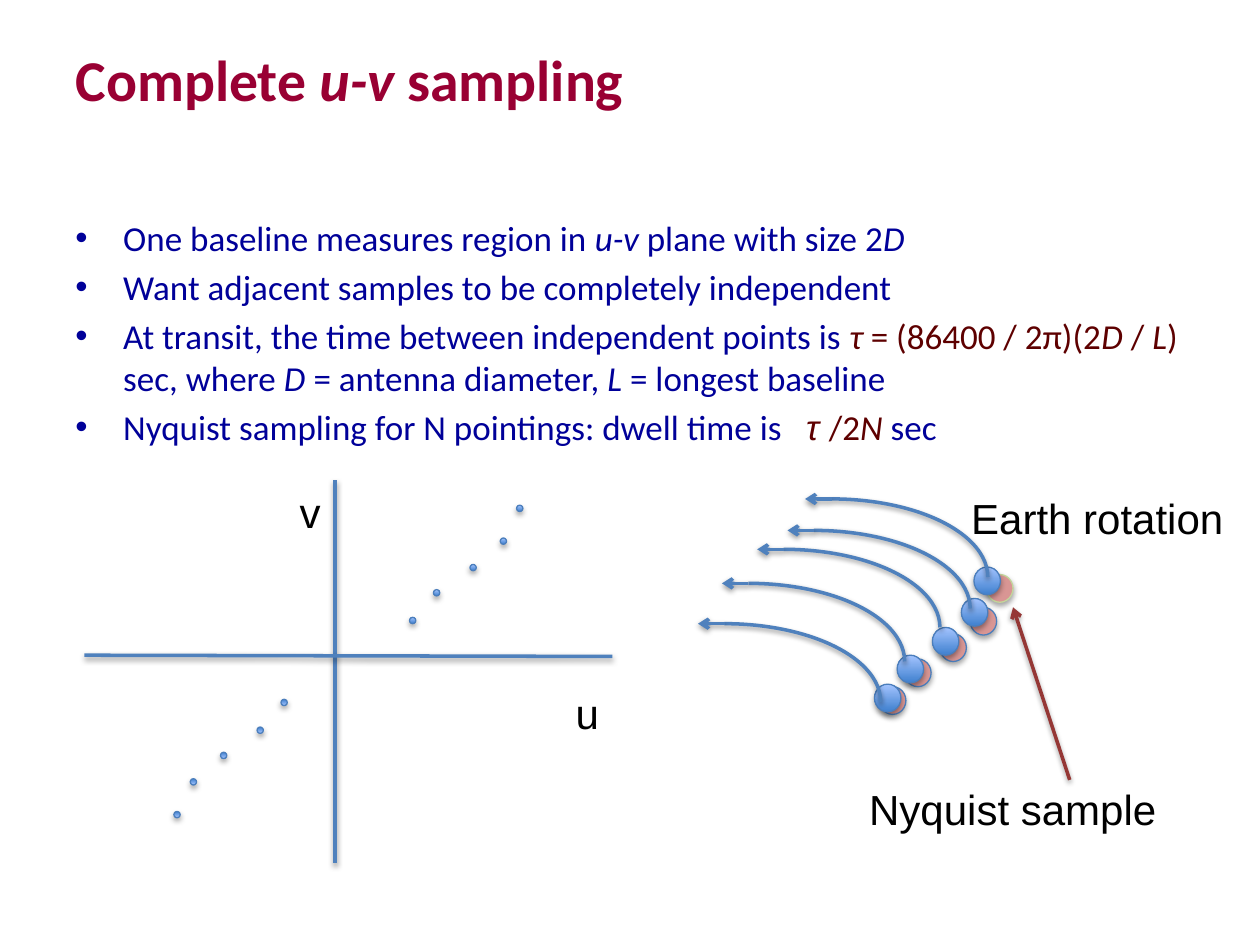
from dataclasses import dataclass

from lxml.etree import SubElement
from pptx import Presentation
from pptx.dml.color import RGBColor
from pptx.enum.shapes import MSO_CONNECTOR as Connector, MSO_SHAPE as Shape
from pptx.enum.text import MSO_ANCHOR as Anchor, MSO_AUTO_SIZE as AutoSize, PP_ALIGN as Align
from pptx.oxml.ns import qn
from pptx.util import Inches, Pt


@dataclass(frozen=True)
class Theme:
    title: str = "990033"
    body: str = "000099"
    formula: str = "5E0000"
    label: str = "000000"
    line: str = "4F81BD"
    outline: str = "4B7EBC"
    blue_dark: str = "3F80CE"
    blue_light: str = "A4C4FF"
    sample: str = "D99694"
    sample_outline: str = "C3D69B"
    pointer: str = "953735"
    text_font: str = "Calibri"
    label_font: str = "Arial"
    title_size: int = 33
    body_size: int = 20
    label_size: int = 24
    line_width: float = 2
    outline_width: float = 0.75


THEME = Theme()

# Each run is its text and flags: i italic, f formula colour, a label font
TITLE = [("Complete ", ""), ("u-v", "i"), (" sampling", "")]
BULLETS = [
    [("One baseline measures region in ", ""), ("u-v", "i"),
     (" plane with size 2", ""), ("D", "i")],
    [("Want adjacent samples to be completely independent", "")],
    [("At transit, the time between independent points is ", ""), ("τ ", "fi"),
     ("= (86400 / 2π)(2", "f"), ("D ", "fi"), ("/ ", "f"), ("L", "fi"), (")", "f"),
     (" sec, where ", ""), ("D ", "i"), ("= antenna diameter, ", ""),
     ("L ", "i"), ("= longest baseline", "")],
    [("Nyquist sampling for N pointings: dwell time is   ", ""), ("τ ", "fia"),
     ("/2", "f"), ("N ", "fi"), ("sec", "")],
]

# Offsets from the left and top of the u-v plot
UV_POINTS = [(2.77, 0.87), (2.58, 1.09), (3.43, 0.2), (3.3, 0.46), (3.06, 0.67)]
UV_MIRROR = (4.14, 2.83)

# Offsets from the left and top of the rotation sketch: antenna, sample, arc
ANTENNAS = [
    ((3.22, 0.64), (3.32, 0.7), (0.85, 0.1)),
    ((3.12, 0.89), (3.19, 0.96), (0.71, 0.35)),
    ((2.89, 1.12), (2.95, 1.17), (0.47, 0.5)),
    ((2.61, 1.34), (2.67, 1.37), (0.19, 0.77)),
    ((2.43, 1.57), (2.47, 1.59), (0, 1.09)),
]


def rgb(value):
    return RGBColor.from_string(value)


def add_shadow(shape, distance, opacity):
    properties = shape._element.spPr
    effects = SubElement(properties, qn("a:effectLst"))
    shadow = SubElement(effects, qn("a:outerShdw"), blurRad=str(Pt(3.1)),
                        dist=str(Pt(distance)), dir="5400000", rotWithShape="0")
    color = SubElement(shadow, qn("a:srgbClr"), val="000000")
    SubElement(color, qn("a:alpha"), val=str(opacity * 1000))


def add_runs(paragraph, runs, size, color, bold=False):
    for text, flags in runs:
        run = paragraph.add_run()
        run.text = text
        font = run.font
        font.name = THEME.label_font if "a" in flags else THEME.text_font
        font.size = Pt(size)
        font.bold = bold
        font.italic = "i" in flags
        font.color.rgb = rgb(THEME.formula if "f" in flags else color)


def add_line(shapes, start, end, color=THEME.line, arrow=False):
    line = shapes.add_connector(Connector.STRAIGHT, *map(Inches, (*start, *end)))
    line.line.color.rgb = rgb(color)
    line.line.width = Pt(THEME.line_width)
    if arrow:
        SubElement(line.line._get_or_add_ln(), qn("a:tailEnd"), type="arrow")
    add_shadow(line, 1.6, 38)


def add_disc(shapes, left, top, width, height, fill=None, outline=THEME.outline):
    """Add a circle, with the blue gradient unless a fill is given."""
    disc = shapes.add_shape(Shape.OVAL, *map(Inches, (left, top, width, height)))
    if fill:
        disc.fill.solid()
        disc.fill.fore_color.rgb = rgb(fill)
    else:
        disc.fill.gradient()
        disc.fill.gradient_angle = 90
        for stop, color in zip(disc.fill.gradient_stops,
                               (THEME.blue_dark, THEME.blue_light)):
            stop.color.rgb = rgb(color)
    disc.line.color.rgb = rgb(outline)
    disc.line.width = Pt(THEME.outline_width)
    add_shadow(disc, 1.8, 35)
    return disc


def add_label(shapes, text, left, top, width):
    box = shapes.add_textbox(*map(Inches, (left, top, width, 0.5)))
    frame = box.text_frame
    frame.word_wrap = False
    frame.auto_size = AutoSize.SHAPE_TO_FIT_TEXT
    frame.text = text
    font = frame.paragraphs[0].runs[0].font
    font.name = THEME.label_font
    font.size = Pt(THEME.label_size)
    font.color.rgb = rgb(THEME.label)


def fill_title(title, left, top, width, height):
    title.left, title.top, title.width, title.height = map(
        Inches, (left, top, width, height))
    title.text_frame.vertical_anchor = Anchor.TOP
    paragraph = title.text_frame.paragraphs[0]
    paragraph.alignment = Align.LEFT
    add_runs(paragraph, TITLE, THEME.title_size, THEME.title, bold=True)


def add_bullets(shapes, left, top, width, height):
    box = shapes.add_textbox(*map(Inches, (left, top, width, height)))
    frame = box.text_frame
    frame.word_wrap = True
    for index, runs in enumerate(BULLETS):
        paragraph = frame.add_paragraph() if index else frame.paragraphs[0]
        paragraph.space_before = Pt(THEME.body_size * 0.2 if index else 0)
        properties = paragraph._p.get_or_add_pPr()
        properties.set("marL", str(Inches(0.38)))
        properties.set("indent", str(Inches(-0.38)))
        SubElement(properties, qn("a:buFont"), typeface=THEME.label_font)
        SubElement(properties, qn("a:buChar"), char="•")
        add_runs(paragraph, runs, THEME.body_size, THEME.body)


def add_uv_plot(shapes, left, top, width, height):
    axis_x = left + 1.99
    add_line(shapes, (axis_x, top), (axis_x, top + height))
    add_line(shapes, (left, top + 1.39), (left + width, top + 1.4))
    add_label(shapes, "v", axis_x - 0.38, top, 0.38)
    add_label(shapes, "u", left + width - 0.39, top + 1.6, 0.39)
    mirrored = shapes.add_group_shape().shapes
    for x, y in UV_POINTS:
        add_disc(shapes, left + x, top + y, 0.05, 0.05)
        opposite = add_disc(mirrored, left + UV_MIRROR[0] - x,
                            top + UV_MIRROR[1] - y, 0.05, 0.05)
        opposite.rotation = 180


def add_rotation_arrow(shapes, left, top, width=2.48, height=1.24):
    group = shapes.add_group_shape().shapes
    arc = group.add_shape(Shape.ARC, *map(Inches, (left, top, width, height)))
    arc.fill.background()
    arc.line.color.rgb = rgb(THEME.line)
    arc.line.width = Pt(THEME.line_width)
    add_shadow(arc, 1.6, 38)
    middle = left + width / 2
    add_line(group, (middle, top), (middle - 0.21, top), arrow=True)


def add_rotation_sketch(shapes, left, top, width, height):
    for index, (_, (x, y), _) in enumerate(ANTENNAS):
        add_disc(shapes, left + x, top + y, 0.21, 0.22, THEME.sample,
                 THEME.outline if index else THEME.sample_outline)
    for (x, y), _, _ in ANTENNAS:
        add_disc(shapes, left + x, top + y, 0.21, 0.22)
    for _, _, (x, y) in ANTENNAS:
        add_rotation_arrow(shapes, left + x, top + y)
    add_label(shapes, "Earth rotation", left + width - 2.22, top, 2.22)
    add_line(shapes, (left + 3.98, top + 2.33), (left + 3.53, top + 0.96),
             THEME.pointer, arrow=True)
    add_label(shapes, "Nyquist sample", left + 2.29, top + height - 0.5, 2.5)


def main():
    presentation = Presentation()
    presentation.slide_width, presentation.slide_height = Inches(10), Inches(7.5)
    slide = presentation.slides.add_slide(presentation.slide_layouts[5])
    fill_title(slide.shapes.title, 0.5, 0.3, 9, 1.25)
    add_bullets(slide.shapes, 0.5, 1.67, 9, 4.95)
    add_uv_plot(slide.shapes, 0.67, 3.81, 4.19, 3.04)
    add_rotation_sketch(slide.shapes, 4.51, 3.86, 5.32, 2.81)
    presentation.save("out.pptx")


if __name__ == "__main__":
    main()
